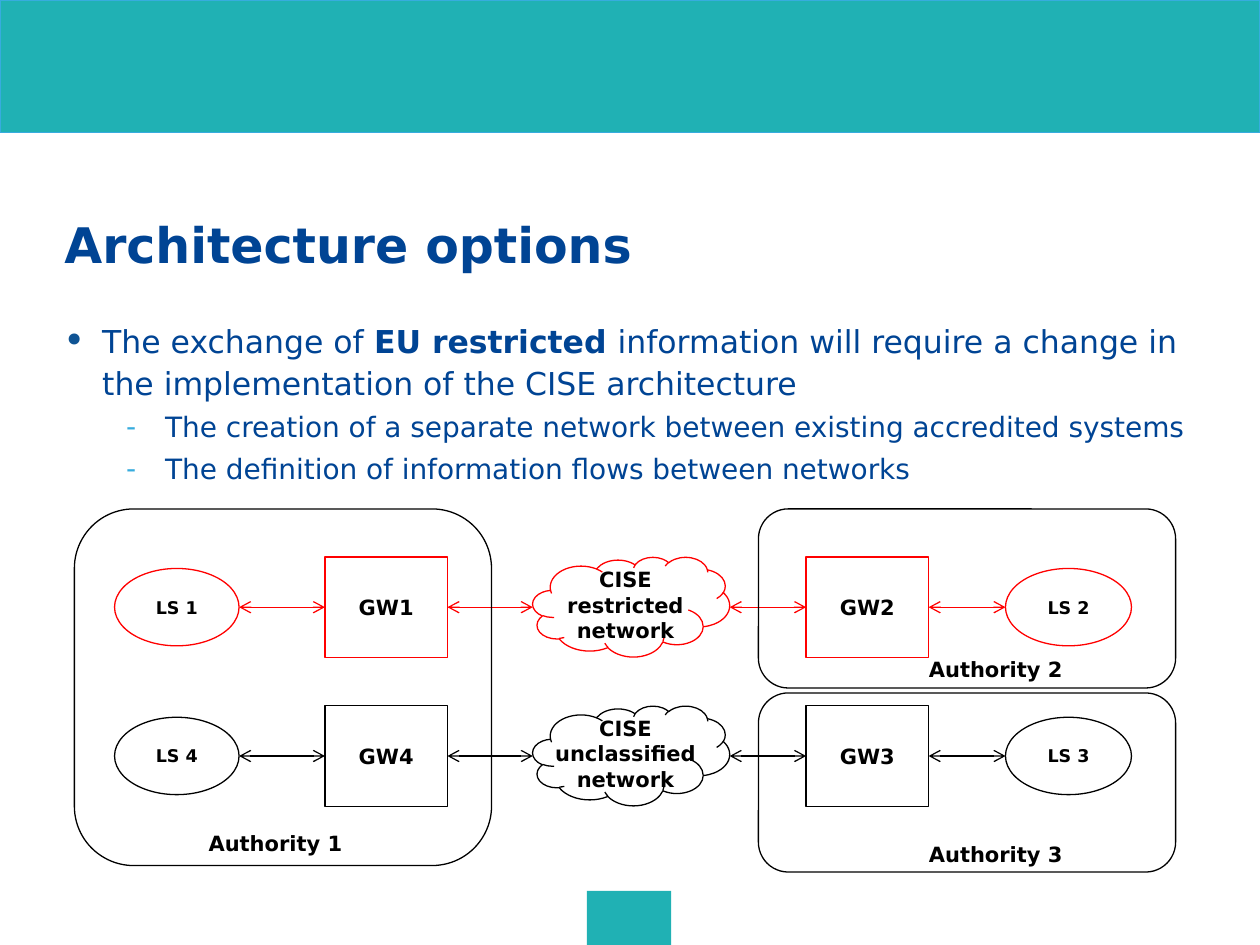
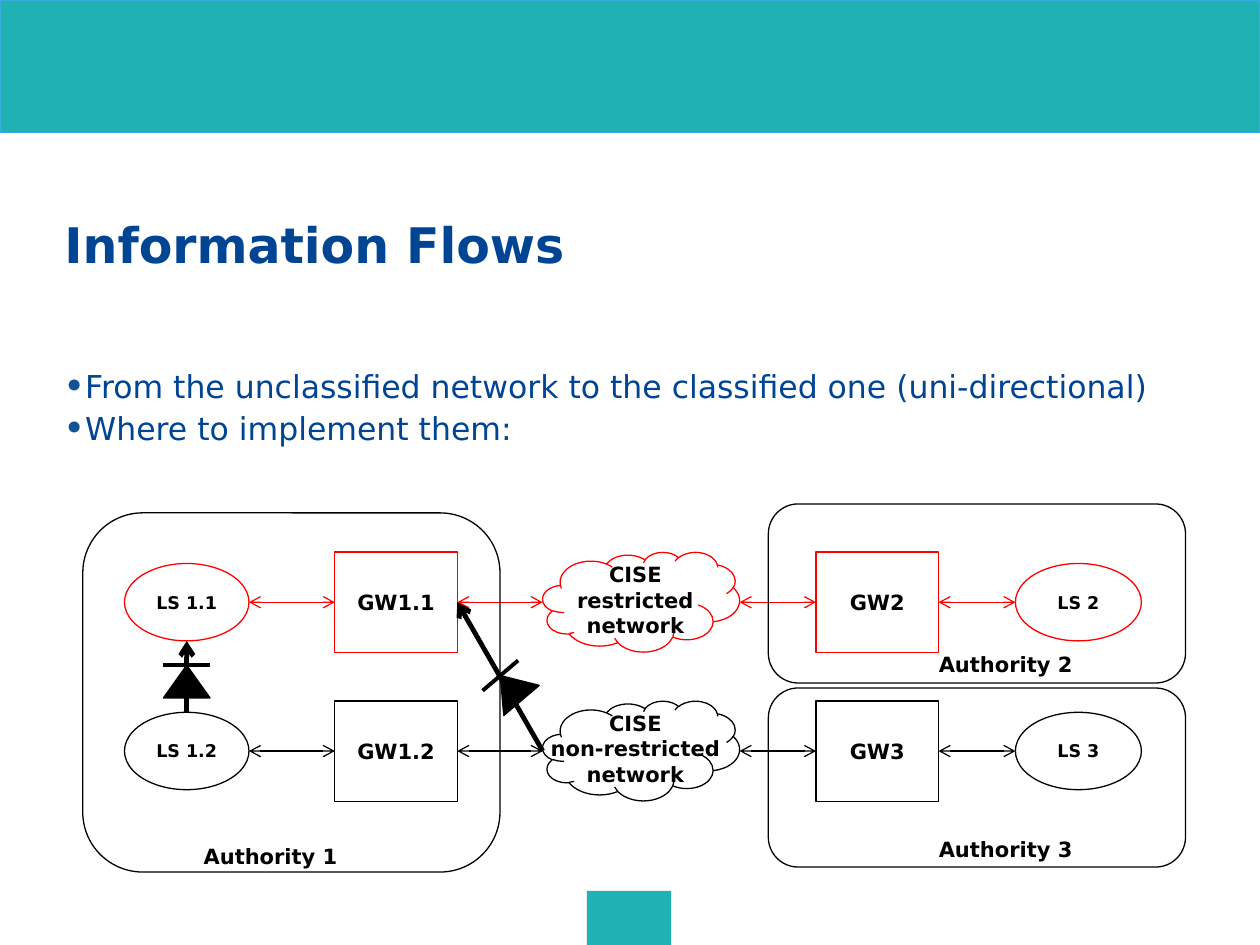
import itertools
import math
from dataclasses import dataclass

import pptx
import pptx.util
from pptx.dml.color import RGBColor
from pptx.enum.shapes import MSO_CONNECTOR, MSO_SHAPE
from pptx.enum.text import MSO_ANCHOR, MSO_AUTO_SIZE, PP_ALIGN
from pptx.oxml.ns import qn
from lxml import etree

Cm, Pt = pptx.util.Cm, pptx.util.Pt

TEAL = RGBColor(0x20, 0xB1, 0xB4)
SKY = RGBColor(0x37, 0xAC, 0xDE)
NAVY = RGBColor(0x00, 0x44, 0x94)
BULLET_BLUE = RGBColor(0x0F, 0x54, 0x94)
RED = RGBColor(0xFF, 0x00, 0x00)
BLACK = RGBColor(0x00, 0x00, 0x00)
FONT = "DejaVu Sans"

# Diagram grid, in cm from the corner of the diagram
ROW_PITCH = 3.0
FLOW_Y = 1.98
NODE_TOP, NODE_HEIGHT = 1.2, 1.56
GATEWAY_TOP, GATEWAY_HEIGHT = 0.97, 2.03
SYSTEM_SPAN = (0, 2.51)
GATEWAY_SPAN = (4.24, 6.71)
CLOUD_SPAN = (8.43, 12.4)
FAR_GATEWAY_SPAN = (13.94, 16.41)
FAR_SYSTEM_SPAN = (17.96, 20.5)


@dataclass
class Region:
    """Part of a slide whose contents are placed from its corner, in cm."""
    slide: object
    left: float
    top: float

    def box(self, x, y, width, height):
        return Cm(self.left + x), Cm(self.top + y), Cm(width), Cm(height)

    def row(self, number):
        return Region(self.slide, self.left, self.top + number * ROW_PITCH)


# Basic parts
def add_run(paragraph, text, size, color=BLACK, bold=True):
    run = paragraph.add_run()
    run.text = text
    font = run.font
    font.name, font.size, font.bold = FONT, Pt(size), bold
    font.color.rgb = color


def clear_insets(frame):
    frame.margin_left = frame.margin_right = 0
    frame.margin_top = frame.margin_bottom = 0


def add_outline(region, kind, box, line=None, fill=None, weight=0.75):
    shape = region.slide.shapes.add_shape(kind, *region.box(*box))
    shape.shadow.inherit = False
    if fill is None:
        shape.fill.background()
    else:
        shape.fill.solid()
        shape.fill.fore_color.rgb = fill
    if line is None:
        shape.line.fill.background()
    else:
        shape.line.color.rgb = line
        shape.line.width = Pt(weight)
    return shape


def write_lines(shape, lines, size):
    frame = shape.text_frame
    frame.word_wrap = True
    frame.vertical_anchor = MSO_ANCHOR.MIDDLE
    clear_insets(frame)
    paragraph = frame.paragraphs[0]
    paragraph.alignment = PP_ALIGN.CENTER
    for number, line in enumerate(lines):
        if number:
            paragraph.add_line_break()
        add_run(paragraph, line, size)


def add_label(region, lines, box):
    label = region.slide.shapes.add_textbox(*region.box(*box))
    write_lines(label, lines, 12)


def add_line(region, start, end, color, weight=0.75, arrows=()):
    (x1, y1), (x2, y2) = start, end
    line = region.slide.shapes.add_connector(
        MSO_CONNECTOR.STRAIGHT,
        Cm(region.left + x1), Cm(region.top + y1),
        Cm(region.left + x2), Cm(region.top + y2))
    line.line.color.rgb = color
    line.line.width = Pt(weight)
    outline = line.line._get_or_add_ln()
    for arrow in arrows:
        etree.SubElement(outline, qn(f"a:{arrow}"), type="arrow")
    etree.SubElement(line._element.spPr, qn("a:effectLst"))


# Diagram
def add_flow_row(region, system, gateway, network, far_gateway, far_system, color):
    """One network: system, gateway, cloud, gateway, system."""
    for name, (left, right) in ((system, SYSTEM_SPAN), (far_system, FAR_SYSTEM_SPAN)):
        node = add_outline(region, MSO_SHAPE.OVAL,
                           (left, NODE_TOP, right - left, NODE_HEIGHT), color)
        write_lines(node, [name], 10)
    for name, (left, right) in ((gateway, GATEWAY_SPAN), (far_gateway, FAR_GATEWAY_SPAN)):
        node = add_outline(region, MSO_SHAPE.RECTANGLE,
                           (left, GATEWAY_TOP, right - left, GATEWAY_HEIGHT), color)
        write_lines(node, [name], 12)

    left, right = CLOUD_SPAN
    add_outline(region, MSO_SHAPE.CLOUD, (left, GATEWAY_TOP, right - left, 2.01), color)
    add_label(region, ["CISE", network, "network"], (8.15, 1.03, 4.3, 1.8))

    spans = (SYSTEM_SPAN, GATEWAY_SPAN, CLOUD_SPAN, FAR_GATEWAY_SPAN, FAR_SYSTEM_SPAN)
    for near, far in itertools.pairwise(spans):
        add_line(region, (near[1], FLOW_Y), (far[0], FLOW_Y), color,
                 arrows=("headEnd", "tailEnd"))


def add_authority(region, name, box, label_corner):
    add_outline(region, MSO_SHAPE.ROUNDED_RECTANGLE, box, BLACK)
    add_label(region, [name], (*label_corner, 3.23, 0.76))


def add_diagram(region, rows, first_authority, first_label):
    for number, (names, color) in enumerate(rows):
        add_flow_row(region.row(number), *names, color)
    add_authority(region, "Authority 1", first_authority, first_label)
    add_authority(region, "Authority 2", (12.98, 0, 8.41, 3.61), (16.15, 2.85))
    add_authority(region, "Authority 3", (12.98, 3.71, 8.41, 3.61), (16.15, 6.58))


def add_diode(region, target, source, centre, tilt=0):
    """One-way flow: arrow to the target, with a triangle and bar across it."""
    width, height = 0.94, 0.66
    x, y = centre
    add_line(region, target, source, BLACK, 2.75, arrows=("headEnd",))
    triangle = add_outline(region, MSO_SHAPE.ISOSCELES_TRIANGLE,
                           (x - width / 2, y - height / 2, width, height), BLACK, BLACK)
    triangle.rotation = tilt
    cos, sin = math.cos(math.radians(tilt)), math.sin(math.radians(tilt))
    tip_x, tip_y = x + sin * height / 2, y - cos * height / 2
    across_x, across_y = cos * width / 2, sin * width / 2
    add_line(region, (tip_x - across_x, tip_y - across_y),
             (tip_x + across_x, tip_y + across_y), BLACK, 2.25)


# Title, list and bands
def add_bands(slide):
    add_outline(Region(slide, 0, 0), MSO_SHAPE.RECTANGLE, (0, 0, 25.4, 2.67), SKY, TEAL)
    add_outline(Region(slide, 11.83, 17.96), MSO_SHAPE.RECTANGLE,
                (0, 0, 1.7, 1.09), fill=TEAL)


def place_placeholder(placeholder, region, width, height):
    placeholder.left, placeholder.top, placeholder.width, placeholder.height = \
        region.box(0, 0, width, height)
    frame = placeholder.text_frame
    clear_insets(frame)
    frame.word_wrap = True
    frame.auto_size = MSO_AUTO_SIZE.SHAPE_TO_FIT_TEXT
    frame.vertical_anchor = MSO_ANCHOR.TOP
    return frame


def set_bullet(paragraph, symbol, color, percent, margin, indent):
    properties = paragraph._p.get_or_add_pPr()
    properties.set("marL", str(Cm(margin)))
    properties.set("indent", str(Cm(indent)))
    bullet_color = etree.SubElement(properties, qn("a:buClr"))
    etree.SubElement(bullet_color, qn("a:srgbClr"), val=str(color))
    etree.SubElement(properties, qn("a:buSzPct"), val=str(percent * 1000))
    etree.SubElement(properties, qn("a:buFont"), typeface=FONT)
    etree.SubElement(properties, qn("a:buChar"), char=symbol)


def add_bullets(slide, top, height, bullets, margin, indent):
    """Each bullet is a level and its (text, bold) runs."""
    frame = place_placeholder(slide.placeholders[1], Region(slide, 1.27, top), 22.86, height)
    for number, (level, runs) in enumerate(bullets):
        paragraph = frame.add_paragraph() if number else frame.paragraphs[0]
        paragraph.level = level
        if level:
            set_bullet(paragraph, "-", SKY, 100, 2.06, -0.79)
        else:
            set_bullet(paragraph, "•", BULLET_BLUE, 120, margin, indent)
        paragraph.alignment = PP_ALIGN.LEFT
        paragraph.line_spacing = Pt(24)
        paragraph.space_before = paragraph.space_after = Pt(0)
        for text, bold in runs:
            add_run(paragraph, text, 16 if level else 18, NAVY, bold)


def start_slide(deck, heading):
    slide = deck.slides.add_slide(deck.slide_layouts[1])
    add_bands(slide)
    frame = place_placeholder(slide.shapes.title, Region(slide, 1.3, 4.32), 22.86, 1.2)
    frame.paragraphs[0].alignment = PP_ALIGN.LEFT
    add_run(frame.paragraphs[0], heading, 28, NAVY)
    return slide


# Slides
def build_architecture_options(deck):
    slide = start_slide(deck, "Architecture options")
    add_bullets(slide, 6.4, 3.43, [
        (0, [("The exchange of ", False), ("EU restricted ", True),
             ("information will require a change in the implementation "
              "of the CISE architecture", False)]),
        (1, [("The creation of a separate network between existing "
              "accredited systems", False)]),
        (1, [("The definition of information flows between networks", False)]),
    ], margin=0.79, indent=-0.79)
    add_diagram(Region(slide, 2.31, 10.26), [
        (("LS 1", "GW1", "restricted", "GW2", "LS 2"), RED),
        (("LS 4", "GW4", "unclassified", "GW3", "LS 3"), BLACK),
    ], (-0.81, 0, 8.41, 7.19), (1.63, 6.35))


def build_information_flows(deck):
    slide = start_slide(deck, "Information Flows")
    add_bullets(slide, 7.32, 1.63, [
        (0, [("From the unclassified network to the classified one "
              "(uni-directional)", False)]),
        (0, [("Where to implement them:", False)]),
    ], margin=0, indent=-0.94)
    diagram = Region(slide, 2.51, 10.16)
    add_diagram(diagram, [
        (("LS 1.1", "GW1.1", "restricted", "GW2", "LS 2"), RED),
        (("LS 1.2", "GW1.2", "non-restricted", "GW3", "LS 3"), BLACK),
    ], (-0.84, 0.18, 8.41, 7.24), (1.33, 6.71))
    middle = sum(SYSTEM_SPAN) / 2
    add_diode(diagram, (middle, NODE_TOP + NODE_HEIGHT),
              (middle, NODE_TOP + ROW_PITCH), (middle, 3.58))
    add_diode(diagram, (GATEWAY_SPAN[1], FLOW_Y),
              (CLOUD_SPAN[0], FLOW_Y + ROW_PITCH), (7.79, 3.71), tilt=-40.4)


def main():
    deck = pptx.Presentation()
    deck.slide_width, deck.slide_height = Cm(25.4), Cm(19.05)
    build_architecture_options(deck)
    build_information_flows(deck)
    deck.save("out.pptx")


if __name__ == "__main__":
    main()
